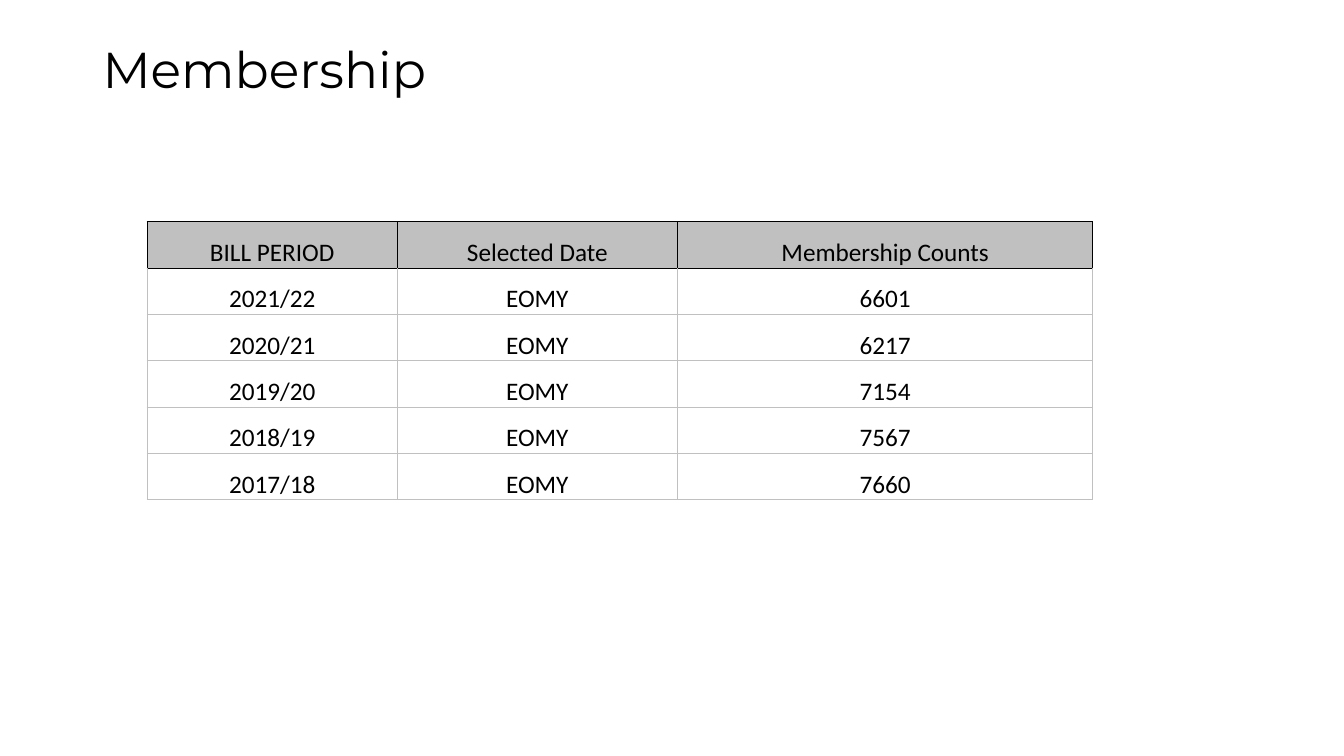
from lxml.etree import SubElement
from pptx import Presentation
from pptx.dml.color import RGBColor
from pptx.enum.text import MSO_ANCHOR, PP_ALIGN
from pptx.oxml.ns import qn
from pptx.util import Inches, Pt

COLORS = {"text": "000000", "header": "C0C0C0", "header_line": "000000", "grid": "C0C0C0"}
CELL_FORMAT = {
    "vertical_anchor": MSO_ANCHOR.BOTTOM,
    "margin_left": Inches(0.07),
    "margin_right": Inches(0.07),
    "margin_top": 0,
    "margin_bottom": 0,
}
COLUMN_WIDTHS = [2.48, 2.78, 4.12]
ROW_HEIGHT = 0.46
ROWS = [
    ("BILL PERIOD", "Selected Date", "Membership Counts"),
    ("2021/22", "EOMY", "6601"),
    ("2020/21", "EOMY", "6217"),
    ("2019/20", "EOMY", "7154"),
    ("2018/19", "EOMY", "7567"),
    ("2017/18", "EOMY", "7660"),
]


def write(p, text, font_name, size):
    r = p.add_run()
    r.text = text
    r.font.name = font_name
    r.font.size = Pt(size)
    r.font.color.rgb = RGBColor.from_string(COLORS["text"])


def add_border(cell, side, color):
    """Draw a 1 pt line on one side (L, R, T or B) of a table cell."""
    ln = SubElement(cell._tc.get_or_add_tcPr(), qn(f"a:ln{side}"), w=str(Pt(1)))
    fill = SubElement(ln, qn("a:solidFill"))
    SubElement(fill, qn("a:srgbClr"), val=color)


prs = Presentation()
prs.slide_width, prs.slide_height = Inches(13.33), Inches(7.5)
s = prs.slides.add_slide(prs.slide_layouts[6])

title = s.shapes.add_textbox(Inches(0.92), Inches(0.4), Inches(11.5), Inches(0.96))
tf = title.text_frame
tf.word_wrap = True
p = tf.paragraphs[0]
p.line_spacing = 0.9
write(p, "Membership", "Montserrat", 36)

table = s.shapes.add_table(
    len(ROWS), len(COLUMN_WIDTHS), Inches(1.46), Inches(2.2),
    Inches(sum(COLUMN_WIDTHS)), Inches(ROW_HEIGHT * len(ROWS)),
).table
table.horz_banding = False
for column, width in zip(table.columns, COLUMN_WIDTHS):
    column.width = Inches(width)

for i, values in enumerate(ROWS):
    table.rows[i].height = Inches(ROW_HEIGHT)
    for j, value in enumerate(values):
        cell = table.cell(i, j)
        for name, setting in CELL_FORMAT.items():
            setattr(cell, name, setting)
        for side in "LRTB":
            under_header = i == 1 and side == "T"
            add_border(cell, side, COLORS["header_line" if i == 0 or under_header else "grid"])
        if i == 0:
            cell.fill.solid()
            cell.fill.fore_color.rgb = RGBColor.from_string(COLORS["header"])
        else:
            cell.fill.background()
        p = cell.text_frame.paragraphs[0]
        p.alignment = PP_ALIGN.CENTER
        write(p, value, "Calibri", 18)
        p.runs[0].font.bold = False

prs.save("out.pptx")
